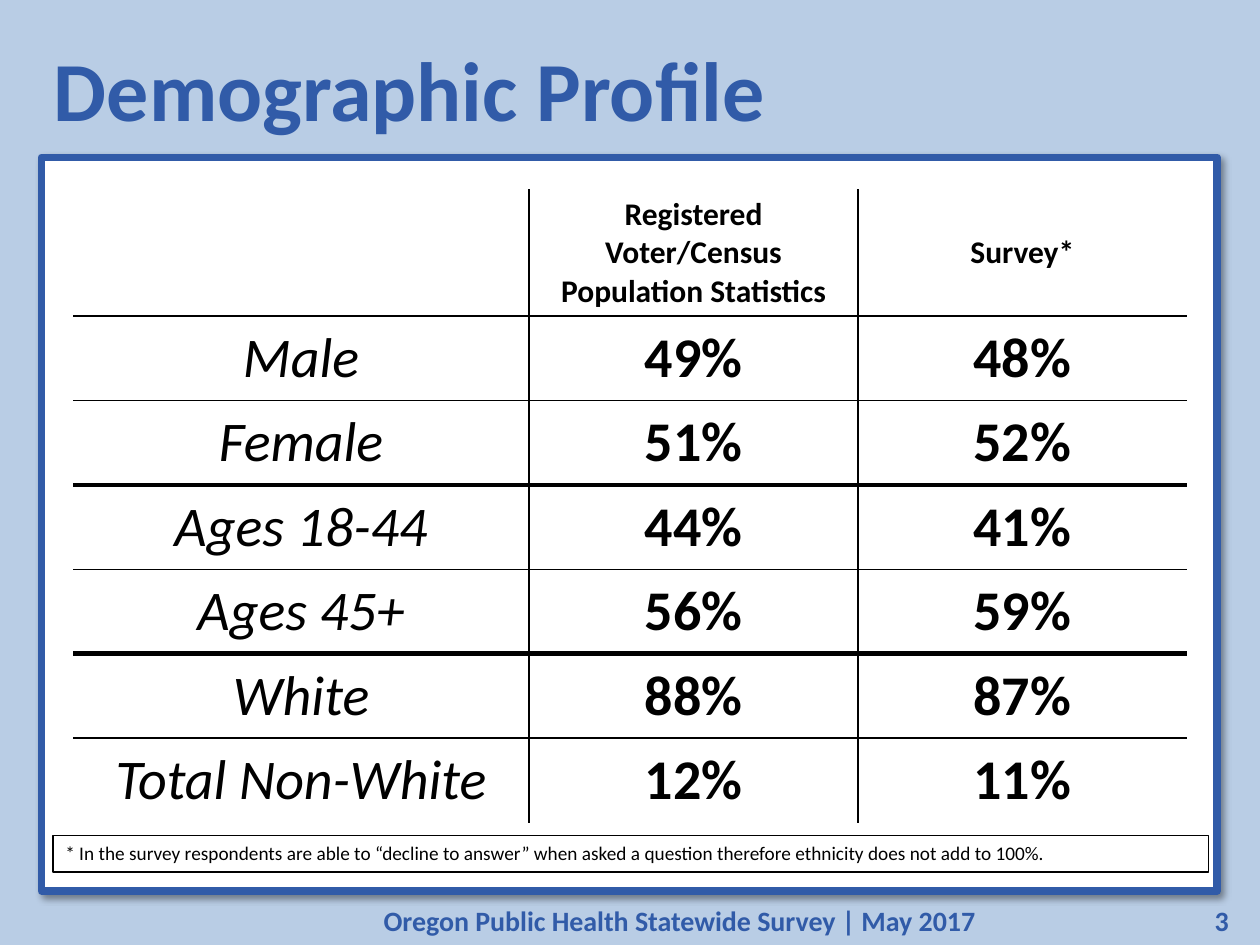
from lxml.etree import SubElement
from pptx import Presentation
from pptx.dml.color import RGBColor
from pptx.enum.shapes import MSO_SHAPE as Shape
from pptx.enum.text import MSO_ANCHOR as Anchor, PP_ALIGN as Align
from pptx.oxml import parse_xml
from pptx.oxml.ns import nsdecls, qn
from pptx.util import Inches, Pt

# Content
TITLE = "Demographic Profile"
HEADERS = ["", "Registered Voter/Census Population Statistics", "Survey*"]
ROWS = [
    ("Male", "49%", "48%"),
    ("Female", "51%", "52%"),
    ("Ages 18-44", "44%", "41%"),
    ("Ages 45+", "56%", "59%"),
    ("White", "88%", "87%"),
    ("Total Non-White", "12%", "11%"),
]
GROUP_SIZE = 2  # a heavy rule closes each pair of rows
NOTE = ("* In the survey respondents are able to “decline to answer” when asked "
        "a question therefore ethnicity does not add to 100%.")
FOOTER = "Oregon Public Health Statewide Survey | May 2017"
PAGE = "3"

# Style
FONT = "Calibri"
BLUE = RGBColor(0x31, 0x5B, 0xA8)
PALE_BLUE = RGBColor(0xB9, 0xCD, 0xE5)
WHITE = RGBColor(0xFF, 0xFF, 0xFF)
BLACK = RGBColor(0, 0, 0)
COLUMN_WIDTHS = [3.62, 2.61, 2.61]
HEADER_HEIGHT, ROW_HEIGHT = 1.01, 0.67


def write(frame, text, size, color, bold=False, italic=False, align=Align.LEFT):
    paragraph = frame.paragraphs[0]
    paragraph.alignment = align
    run = paragraph.add_run()
    run.text = text
    font = run.font
    font.name, font.size, font.bold, font.italic = FONT, Pt(size), bold, italic
    font.color.rgb = color


def add_label(slide, box, text, size, align):
    frame = slide.shapes.add_textbox(*map(Inches, box)).text_frame
    frame.word_wrap = True
    frame.vertical_anchor = Anchor.MIDDLE
    write(frame, text, size, BLUE, bold=True, align=align)


def add_panel(slide, box, fill, line, width):
    panel = slide.shapes.add_shape(Shape.RECTANGLE, *map(Inches, box))
    panel.shadow.inherit = False
    if fill is None:
        panel.fill.background()
    else:
        panel.fill.solid()
        panel.fill.fore_color.rgb = fill
    panel.line.color.rgb = line
    panel.line.width = Pt(width)
    return panel


def set_borders(cell, widths):
    """Draw each side at its width in points; zero means no line."""
    properties = cell._tc.get_or_add_tcPr()
    for side in "LRTB":
        width = widths[side]
        line = SubElement(properties, qn(f"a:ln{side}"), w=str(Pt(width)))
        if width:
            fill = SubElement(line, qn("a:solidFill"))
            SubElement(fill, qn("a:srgbClr"), val=str(BLACK))
        else:
            SubElement(line, qn("a:noFill"))


def rule_below(row):
    if row < 0 or row == len(ROWS):
        return 0
    return 3 if row and row % GROUP_SIZE == 0 else 1


prs = Presentation()
prs.slide_width, prs.slide_height = Inches(10), Inches(7.5)
slide = prs.slides.add_slide(prs.slide_layouts[6])
slide.background.fill.solid()
slide.background.fill.fore_color.rgb = PALE_BLUE

# Footer and title
add_label(slide, (1.62, 7.12, 7.55, 0.37), FOOTER, 16, Align.CENTER)
add_label(slide, (9.17, 7.12, 0.68, 0.37), PAGE, 16, Align.RIGHT)

# White panel with a soft shadow
panel = add_panel(slide, (0.33, 1.25, 9.33, 5.82), WHITE, BLUE, 4.5)
effects = panel._element.spPr.find(qn("a:effectLst"))
effects.append(parse_xml(
    f'<a:outerShdw {nsdecls("a")} blurRad="{Pt(4)}" dist="{Pt(3)}" '
    'dir="2700000" algn="tl" rotWithShape="0"><a:srgbClr val="000000">'
    '<a:alpha val="40000"/></a:srgbClr></a:outerShdw>'))

add_label(slide, (0.33, 0.14, 7.21, 1.11), TITLE, 48, Align.LEFT)

# Demographic table
grid = [HEADERS, *ROWS]
table_height = HEADER_HEIGHT + ROW_HEIGHT * len(ROWS)
table = slide.shapes.add_table(
    len(grid), len(HEADERS), Inches(0.58), Inches(1.5),
    Inches(sum(COLUMN_WIDTHS)), Inches(table_height)).table
table.first_row = table.horz_banding = False
for column, width in zip(table.columns, COLUMN_WIDTHS):
    column.width = Inches(width)

for r, texts in enumerate(grid):
    is_header = r == 0
    table.rows[r].height = Inches(HEADER_HEIGHT if is_header else ROW_HEIGHT)
    for c, text in enumerate(texts):
        cell = table.cell(r, c)
        set_borders(cell, {"L": int(c > 0), "R": int(c < len(texts) - 1),
                           "T": rule_below(r - 1), "B": rule_below(r)})
        cell.vertical_anchor = Anchor.MIDDLE
        if is_header:
            cell.fill.background()
        else:
            cell.fill.solid()
            cell.fill.fore_color.rgb = WHITE
            cell.margin_left = cell.margin_right = 0
            cell.margin_top = cell.margin_bottom = 0
        if text:
            is_label = c == 0
            write(cell.text_frame, text, 18 if is_header else 32, BLACK,
                  bold=not is_label, italic=is_label, align=Align.CENTER)

# Footnote
note = add_panel(slide, (0.42, 6.63, 9.17, 0.29), None, BLACK, 0.75)
note.text_frame.word_wrap = True
note.text_frame.vertical_anchor = Anchor.TOP
write(note.text_frame, NOTE, 11, BLACK)

prs.save("out.pptx")
